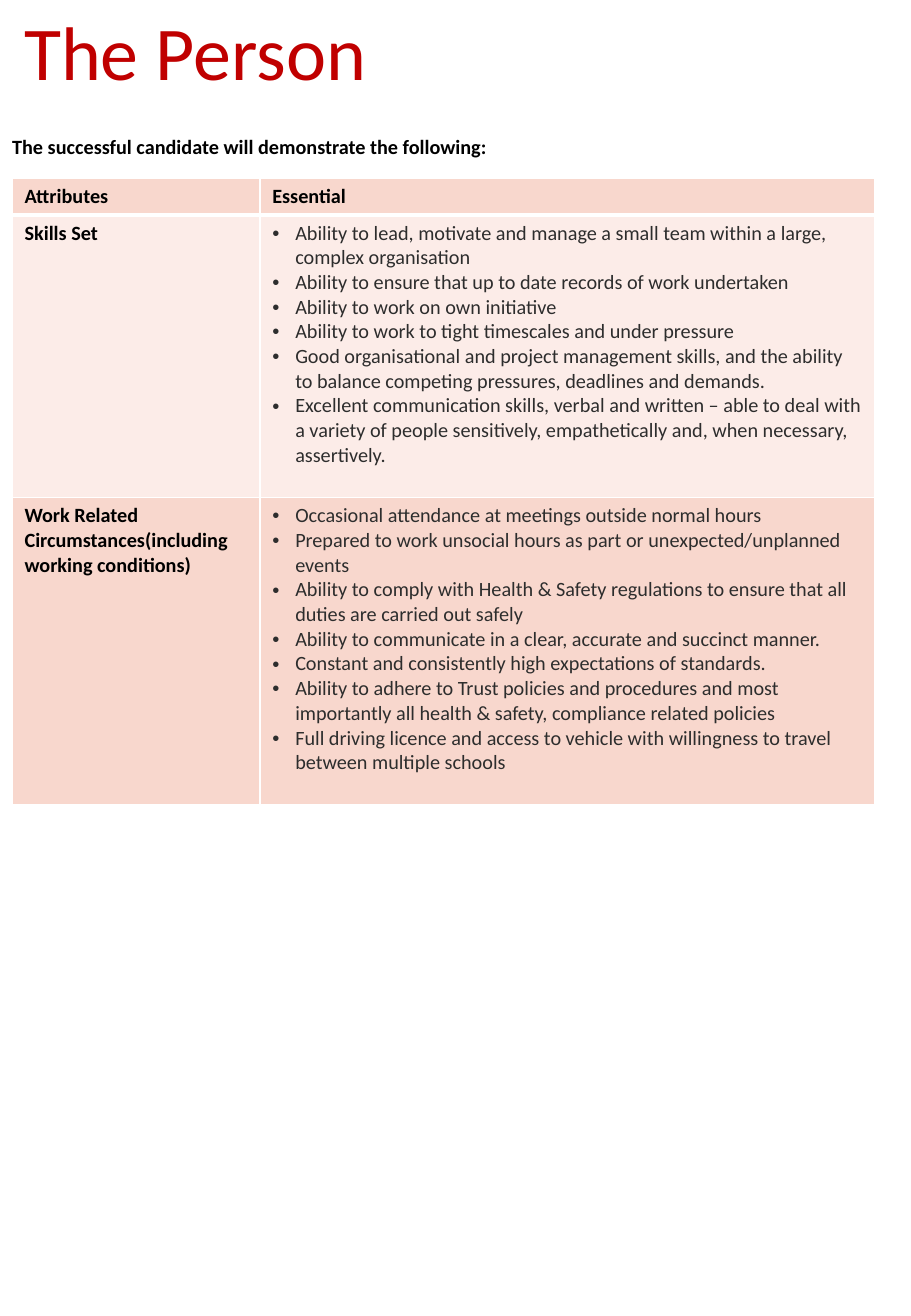
from dataclasses import dataclass

from lxml.etree import SubElement
from pptx import Presentation
from pptx.dml.color import RGBColor
from pptx.enum.text import MSO_ANCHOR, MSO_AUTO_SIZE, PP_ALIGN
from pptx.oxml.ns import qn
from pptx.util import Cm, Pt


# Colours and type sizes
@dataclass(frozen=True)
class Theme:
    font: str = "Calibri"
    title_size: float = 45
    text_size: float = 12
    title_colour: str = "C00000"
    heading_colour: str = "000000"
    list_colour: str = "2D2D2D"
    dark_fill: str = "F8D7CD"
    light_fill: str = "FCECE8"
    border: str = "FFFFFF"
    thin_line: float = 1
    thick_line: float = 3


@dataclass(frozen=True)
class AttributeRow:
    heading: str
    essentials: list[str]
    fill: str
    height: float
    bulleted: bool = True


THEME = Theme()
COLUMN_WIDTHS = (5.18, 12.85)
BULLET_INDENT = Cm(0.48)

# Table content
ROWS = [
    AttributeRow("Attributes", ["Essential"], THEME.dark_fill, 0.76, bulleted=False),
    AttributeRow("Skills Set", [
        "Ability to lead, motivate and manage a small team within a large, complex organisation",
        "Ability to ensure that up to date records of work undertaken",
        "Ability to work on own initiative",
        "Ability to work to tight timescales and under pressure",
        "Good organisational and project management skills, and the ability to balance "
        "competing pressures, deadlines and demands.",
        "Excellent communication skills, verbal and written – able to deal with a variety of "
        "people sensitively, empathetically and, when necessary, assertively.",
    ], THEME.light_fill, 5.91),
    AttributeRow("Work Related Circumstances(including working conditions)", [
        "Occasional attendance at meetings outside normal hours",
        "Prepared to work unsocial hours as part or unexpected/unplanned events",
        "Ability to comply with Health & Safety regulations to ensure that all duties are "
        "carried out safely",
        "Ability to communicate in a clear, accurate and succinct manner.",
        "Constant and consistently high expectations of standards.",
        "Ability to adhere to Trust policies and procedures and most importantly all health & "
        "safety, compliance related policies",
        "Full driving licence and access to vehicle with willingness to travel between "
        "multiple schools",
    ], THEME.dark_fill, 6.43),
]


def apply_format(target, values: dict) -> None:
    for name, value in values.items():
        setattr(target, name, value)


def write_paragraph(paragraph, text: str, size: float, colour: str, bold: bool) -> None:
    run = paragraph.add_run()
    run.text = text
    apply_format(run.font, {"name": THEME.font, "size": Pt(size), "bold": bold})
    run.font.color.rgb = RGBColor.from_string(colour)


def set_bullet(paragraph, indent: int, character: str = "") -> None:
    properties = paragraph._p.get_or_add_pPr()
    properties.set("marL", str(indent))
    properties.set("indent", str(-indent))
    if character:
        SubElement(properties, qn("a:buFont"), typeface="Arial")
        SubElement(properties, qn("a:buChar"), char=character)
    else:
        SubElement(properties, qn("a:buNone"))


def fill_placeholder(shape, box: tuple, frame_format: dict, paragraph_format: dict,
                     text: str, size: float, colour: str, bold: bool) -> None:
    apply_format(shape, dict(zip(("left", "top", "width", "height"), map(Cm, box))))
    apply_format(shape.text_frame, {"auto_size": MSO_AUTO_SIZE.NONE, "word_wrap": True,
                                    **frame_format})
    paragraph = shape.text_frame.paragraphs[0]
    apply_format(paragraph, {"line_spacing": 0.9, **paragraph_format})
    set_bullet(paragraph, 0)
    write_paragraph(paragraph, text, size, colour, bold)


def set_borders(cell, top: float, bottom: float) -> None:
    widths = {"L": THEME.thin_line, "R": THEME.thin_line, "T": top, "B": bottom}
    properties = cell._tc.get_or_add_tcPr()
    for side, width in widths.items():
        line = SubElement(properties, qn(f"a:ln{side}"), w=str(Pt(width)))
        SubElement(SubElement(line, qn("a:solidFill")), qn("a:srgbClr"), val=THEME.border)


def fill_cell(cell, texts: list[str], fill: str, bulleted: bool) -> None:
    for index, text in enumerate(texts):
        frame = cell.text_frame
        paragraph = frame.add_paragraph() if index else frame.paragraphs[0]
        if bulleted:
            set_bullet(paragraph, BULLET_INDENT, "•")
        colour = THEME.list_colour if bulleted else THEME.heading_colour
        write_paragraph(paragraph, text, THEME.text_size, colour, not bulleted)
    cell.fill.solid()
    cell.fill.fore_color.rgb = RGBColor.from_string(fill)


def add_attribute_table(slide, rows: list[AttributeRow]) -> None:
    table = slide.shapes.add_table(
        len(rows), len(COLUMN_WIDTHS), Cm(0.26), Cm(3.72),
        Cm(sum(COLUMN_WIDTHS)), Cm(sum(row.height for row in rows))).table
    for column, width in zip(table.columns, COLUMN_WIDTHS):
        column.width = Cm(width)
    for index, row in enumerate(rows):
        table.rows[index].height = Cm(row.height)
        top = THEME.thick_line if index == 1 else THEME.thin_line
        bottom = THEME.thick_line if index == 0 else THEME.thin_line
        contents = (([row.heading], False), (row.essentials, row.bulleted))
        for column, (texts, bulleted) in enumerate(contents):
            cell = table.cell(index, column)
            set_borders(cell, top, bottom)
            fill_cell(cell, texts, row.fill, bulleted)


def main() -> None:
    presentation = Presentation()
    apply_format(presentation, {"slide_width": Cm(19.05), "slide_height": Cm(27.51)})
    slide = presentation.slides.add_slide(presentation.slide_layouts[1])

    # Title and introduction
    fill_placeholder(slide.shapes.title, (0.25, 0.33, 16.43, 1.68),
                     {"vertical_anchor": MSO_ANCHOR.MIDDLE}, {"alignment": PP_ALIGN.LEFT},
                     "The Person", THEME.title_size, THEME.title_colour, False)
    fill_placeholder(slide.placeholders[1], (0, 2.01, 17.73, 23.29),
                     {"vertical_anchor": MSO_ANCHOR.TOP, "margin_top": Cm(0.86)},
                     {"alignment": PP_ALIGN.JUSTIFY, "space_before": Pt(0)},
                     "The successful candidate will demonstrate the following:",
                     THEME.text_size, THEME.heading_colour, True)

    # Attributes
    add_attribute_table(slide, ROWS)
    presentation.save("out.pptx")


if __name__ == "__main__":
    main()
